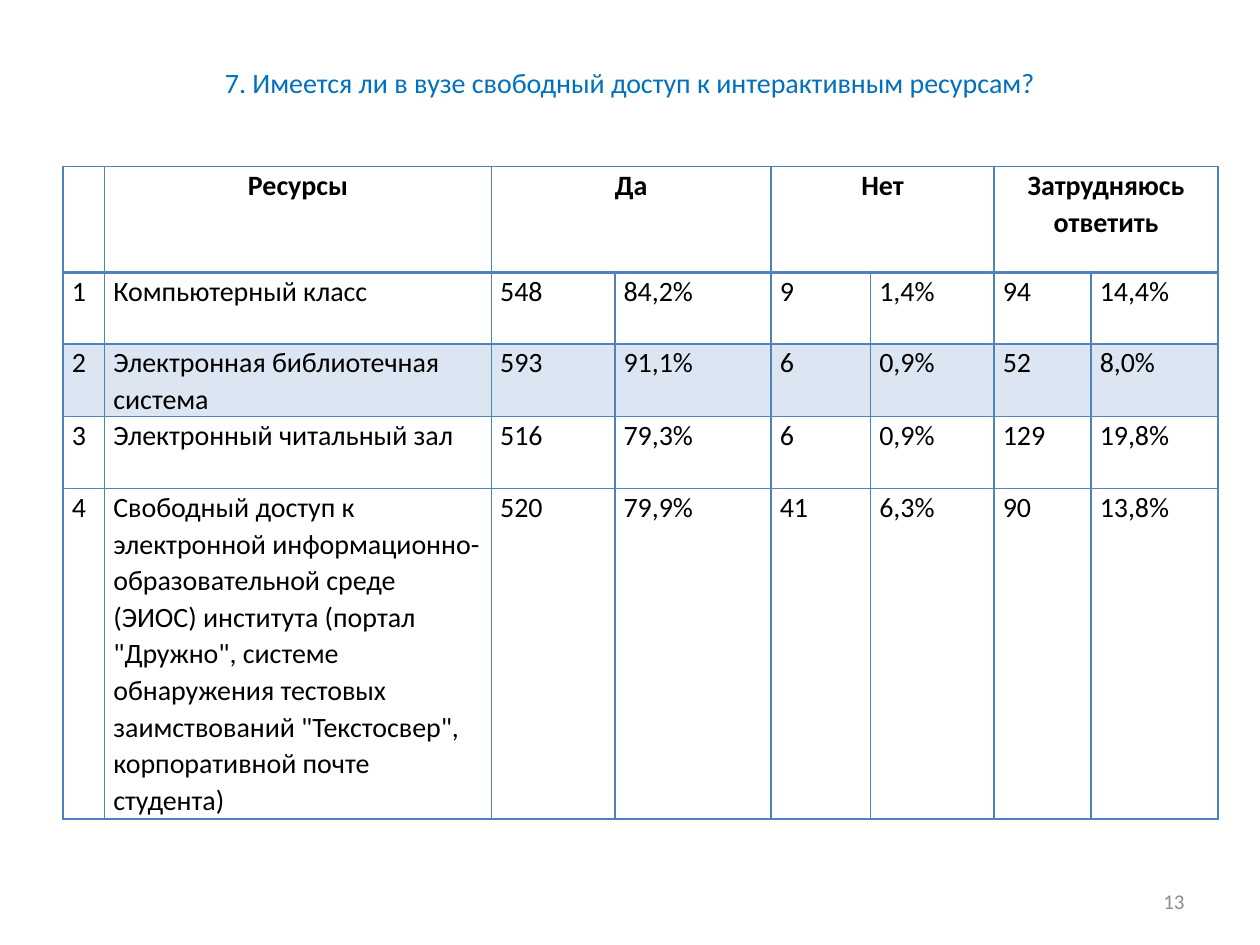
from lxml.etree import SubElement
from pptx import Presentation
from pptx.dml.color import RGBColor
from pptx.enum.text import MSO_ANCHOR as Anchor, PP_ALIGN as Align
from pptx.oxml.ns import qn
from pptx.util import Inches, Pt

COLUMNS = [3.3, 30.7, 9.8, 12.4, 7.9, 9.8, 7.7, 10.1]
ROWS = [11.2, 7.6, 7.7, 7.6, 35]
HEADER = ["", "Ресурсы", "Да", "", "Нет", "", "Затрудняюсь ответить", ""]
ANSWERS = [
    ["1", "Компьютерный класс", "548", "84,2%", "9", "1,4%", "94", "14,4%"],
    ["2", "Электронная библиотечная система", "593", "91,1%", "6", "0,9%", "52", "8,0%"],
    ["3", "Электронный читальный зал", "516", "79,3%", "6", "0,9%", "129", "19,8%"],
    ["4", "Свободный доступ к электронной информационно-образовательной среде (ЭИОС) "
          "института (портал \"Дружно\", системе обнаружения тестовых заимствований "
          "\"Текстосвер\", корпоративной почте студента)",
     "520", "79,9%", "41", "6,3%", "90", "13,8%"],
]


def rgb(value):
    """Turn a hex string into a colour."""
    return RGBColor.from_string(value)


def write(tf, text, size=16, color="000000", bold=False, align=Align.LEFT,
          spacing=None, after=None, font="Calibri"):
    """Put one formatted paragraph in a text frame."""
    tf.word_wrap = True
    p = tf.paragraphs[0]
    p.alignment, p.line_spacing = align, spacing
    if after is not None:
        p.space_after = Pt(after)
    r = p.add_run()
    r.text = text
    r.font.name, r.font.size, r.font.bold = font, Pt(size), bold
    r.font.color.rgb = rgb(color)


class SurveySlide:
    """Hold the style and the slide, and add its elements by percent of its size."""

    accent, line, band, muted = "0070C0", "4F81BD", "DCE6F2", "8C8C8C"

    def __init__(self, prs):
        """Add a title-only slide."""
        self.width, self.height = prs.slide_width, prs.slide_height
        self.s = prs.slides.add_slide(prs.slide_layouts[5])

    def x(self, percent):
        """Convert a percent of the slide width to a length."""
        return int(percent * self.width / 100)

    def y(self, percent):
        """Convert a percent of the slide height to a length."""
        return int(percent * self.height / 100)

    def box(self, left, top, width, height):
        """Convert a place in percent to slide lengths."""
        return self.x(left), self.y(top), self.x(width), self.y(height)

    def title(self, text, *place):
        """Move and fill the title placeholder."""
        sp = self.s.shapes.title
        sp.left, sp.top, sp.width, sp.height = self.box(*place)
        sp.text_frame.vertical_anchor = Anchor.MIDDLE
        write(sp.text_frame, text, color=self.accent, align=Align.CENTER)

    def number(self, text, *place):
        """Add the page number."""
        tf = self.s.shapes.add_textbox(*self.box(*place)).text_frame
        tf.vertical_anchor = Anchor.MIDDLE
        write(tf, text, size=12, color=self.muted, align=Align.RIGHT)

    def border(self, cell, **widths):
        """Draw the cell edges with widths in points."""
        props = cell._tc.get_or_add_tcPr()
        for side, width in widths.items():
            ln = SubElement(props, qn(f"a:ln{side}"), w=str(Pt(width)))
            fill = SubElement(ln, qn("a:solidFill"))
            SubElement(fill, qn("a:srgbClr"), val=self.line)

    def cell(self, cell, text, row):
        """Format and fill one table cell."""
        header = row == 0
        cell.margin_left = cell.margin_right = Inches(0.07)
        cell.margin_top = cell.margin_bottom = 0
        self.border(cell, L=1, R=1, T=2 if row == 1 else 1, B=2 if header else 1)
        if row == 2:
            cell.fill.solid()
            cell.fill.fore_color.rgb = rgb(self.band)
        else:
            cell.fill.background()
        if text:
            write(cell.text_frame, text, bold=header, spacing=1.07, after=8,
                  align=Align.CENTER if header else Align.LEFT)

    def table(self, rows, left, top):
        """Add the answers table with paired header cells merged."""
        place = self.box(left, top, sum(COLUMNS), sum(ROWS))
        table = self.s.shapes.add_table(len(ROWS), len(COLUMNS), *place).table
        table.first_row = table.horz_banding = False
        for column, percent in zip(table.columns, COLUMNS):
            column.width = self.x(percent)
        for row, percent in zip(table.rows, ROWS):
            row.height = self.y(percent)
        for first in range(2, len(COLUMNS), 2):
            table.cell(0, first).merge(table.cell(0, first + 1))
        for i, row in enumerate(rows):
            for j, text in enumerate(row):
                self.cell(table.cell(i, j), text, i)


def main():
    """Build and save the slide."""
    prs = Presentation()
    prs.slide_width, prs.slide_height = Inches(10), Inches(7.5)
    slide = SurveySlide(prs)
    slide.title("7. Имеется ли в вузе свободный доступ к интерактивным ресурсам?",
                5, 4, 90, 9.4)
    slide.number("13", 71.7, 92.7, 23.3, 5.3)
    slide.table([HEADER] + ANSWERS, 5, 17.6)
    prs.save("out.pptx")


if __name__ == "__main__":
    main()
